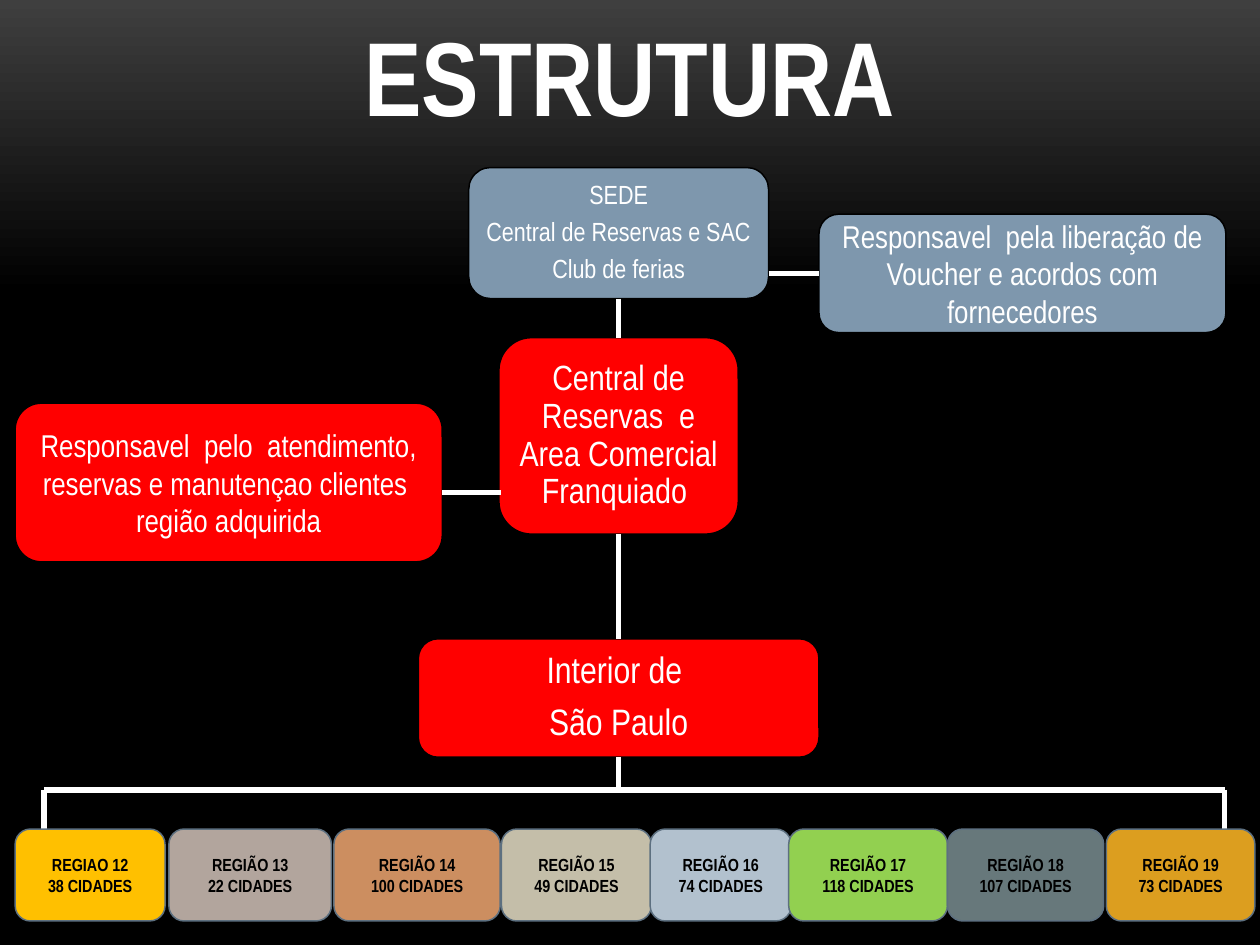
from lxml import etree
from pptx import Presentation
from pptx.dml.color import RGBColor
from pptx.enum.shapes import MSO_CONNECTOR as CONNECTOR, MSO_SHAPE as SHAPE
from pptx.enum.text import MSO_ANCHOR as ANCHOR, PP_ALIGN as ALIGN
from pptx.oxml.ns import qn
from pptx.util import Inches, Pt

FONT = "Arial Narrow"
WHITE = RGBColor(0xFF, 0xFF, 0xFF)
BLACK = RGBColor(0x00, 0x00, 0x00)
CHARCOAL = RGBColor(0x3F, 0x3F, 0x3F)
RED = RGBColor(0xFF, 0x00, 0x00)
STEEL = RGBColor(0x7E, 0x97, 0xAD)
REGION_EDGE = RGBColor(0x5D, 0x70, 0x80)

AXIS = 4.91  # centre line of the hierarchy
BUS_Y, BUS_LEFT, BUS_RIGHT = 6.27, 0.35, 9.72
REGION_TOP, REGION_HEIGHT = 6.58, 0.73
TOP, LEFT, BOTTOM = 0, 1, 2

# Left, width, fill, name, number of cities
REGIONS = [
    (0.12, 1.19, RGBColor(0xFF, 0xC0, 0x00), "REGIAO 12", 38),
    (1.34, 1.29, RGBColor(0xB2, 0xA5, 0x9D), "REGIÃO 13", 22),
    (2.65, 1.32, RGBColor(0xCC, 0x8E, 0x60), "REGIÃO 14", 100),
    (3.98, 1.19, RGBColor(0xC4, 0xBE, 0xA9), "REGIÃO 15", 49),
    (5.16, 1.12, RGBColor(0xB2, 0xC1, 0xCE), "REGIÃO 16", 74),
    (6.26, 1.26, RGBColor(0x92, 0xD0, 0x50), "REGIÃO 17", 118),
    (7.52, 1.24, RGBColor(0x67, 0x78, 0x7B), "REGIÃO 18", 107),
    (8.78, 1.18, RGBColor(0xDC, 0x9E, 0x1F), "REGIÃO 19", 73),
]


def write_text(shape, *lines, size, color=WHITE, bold=False, anchor=ANCHOR.MIDDLE,
               inset=None, line_spacing=None, space_after=None):
    frame = shape.text_frame
    frame.word_wrap = True
    frame.vertical_anchor = anchor
    if inset is not None:
        frame.margin_left = frame.margin_right = Inches(inset)
        frame.margin_top = frame.margin_bottom = Inches(inset)
    for index, line in enumerate(lines):
        paragraph = frame.add_paragraph() if index else frame.paragraphs[0]
        paragraph.alignment = ALIGN.CENTER
        if line_spacing is not None:
            paragraph.line_spacing = line_spacing
        if space_after is not None:
            paragraph.space_after = Pt(space_after)
        run = paragraph.add_run()
        run.text = line
        run.font.name = FONT
        run.font.size = Pt(size)
        run.font.bold = bold
        run.font.color.rgb = color


def add_box(slide, left, top, width, height, fill, edge=BLACK):
    box = slide.shapes.add_shape(SHAPE.ROUNDED_RECTANGLE, Inches(left), Inches(top),
                                 Inches(width), Inches(height))
    box.shadow.inherit = False
    box.fill.solid()
    box.fill.fore_color.rgb = fill
    box.line.color.rgb = edge
    box.line.width = Pt(0.85)
    return box


def add_level(slide, top, width, height, fill, *lines, size, inset):
    """Add a box of the hierarchy, centred on its axis."""
    box = add_box(slide, AXIS - width / 2, top, width, height, fill)
    write_text(box, *lines, size=size, inset=inset, line_spacing=0.9,
               space_after=round(size * 0.35))
    return box


def add_link(slide, x1, y1, x2, y2, begin=None, end=None):
    """Add a white line; begin and end are (box, side) pairs to join."""
    link = slide.shapes.add_connector(CONNECTOR.STRAIGHT, Inches(x1), Inches(y1),
                                      Inches(x2), Inches(y2))
    link.line.color.rgb = WHITE
    link.line.width = Pt(3)
    etree.SubElement(link.element.spPr, qn("a:effectLst"))
    if begin:
        link.begin_connect(*begin)
    if end:
        link.end_connect(*end)


def paint_background(slide):
    fill = slide.background.fill
    fill.gradient()
    fill.gradient_angle = 270
    for stop, color, position in zip(fill.gradient_stops, (CHARCOAL, BLACK), (0, 0.31)):
        stop.color.rgb = color
        stop.position = position


def main():
    prs = Presentation()
    prs.slide_width, prs.slide_height = Inches(10), Inches(7.5)
    slide = prs.slides.add_slide(prs.slide_layouts[6])
    paint_background(slide)

    # Title
    title = slide.shapes.add_textbox(Inches(0.5), Inches(-0.11), Inches(9), Inches(1.25))
    write_text(title, "ESTRUTURA", size=60, bold=True, anchor=ANCHOR.BOTTOM)

    # Hierarchy
    head_office = add_level(slide, 1.33, 2.38, 1.04, STEEL, "SEDE",
                            "Central de Reservas e SAC", "Club de ferias",
                            size=15, inset=0.04)
    franchise = add_level(slide, 2.68, 1.9, 1.56, RED,
                          "Central de Reservas  e Area Comercial Franquiado ",
                          size=20, inset=0.06)
    interior = add_level(slide, 5.07, 3.18, 0.94, RED, "Interior de ", "São Paulo",
                         size=21, inset=0.06)
    add_link(slide, AXIS, 2.37, AXIS, 2.68, (head_office, BOTTOM), (franchise, TOP))
    add_link(slide, AXIS, 4.24, AXIS, 5.07, (franchise, BOTTOM), (interior, TOP))

    # Responsibilities beside the hierarchy
    voucher_duty = add_box(slide, 6.5, 1.7, 3.23, 0.94, STEEL)
    write_text(voucher_duty, "Responsavel  pela liberação de Voucher e acordos com fornecedores",
               size=18)
    add_link(slide, 6.1, 2.17, 6.5, 2.17, end=(voucher_duty, LEFT))
    service_duty = add_box(slide, 0.12, 3.2, 3.39, 1.26, RED)
    write_text(service_duty, "Responsavel  pelo  atendimento, reservas e manutençao clientes "
               " região adquirida", size=18)
    add_link(slide, 3.51, 3.91, 3.98, 3.91)

    # Branches to the regions
    add_link(slide, BUS_LEFT, BUS_Y, BUS_RIGHT, BUS_Y)
    add_link(slide, AXIS, 6.01, AXIS, BUS_Y, begin=(interior, BOTTOM))
    for x in (BUS_LEFT, BUS_RIGHT):
        add_link(slide, x, BUS_Y, x, REGION_TOP)

    # Regions
    for left, width, fill, name, cities in REGIONS:
        region = add_box(slide, left, REGION_TOP, width, REGION_HEIGHT, fill, REGION_EDGE)
        write_text(region, name, f"{cities} CIDADES", size=10, color=BLACK, bold=True)

    prs.save("out.pptx")


if __name__ == "__main__":
    main()
